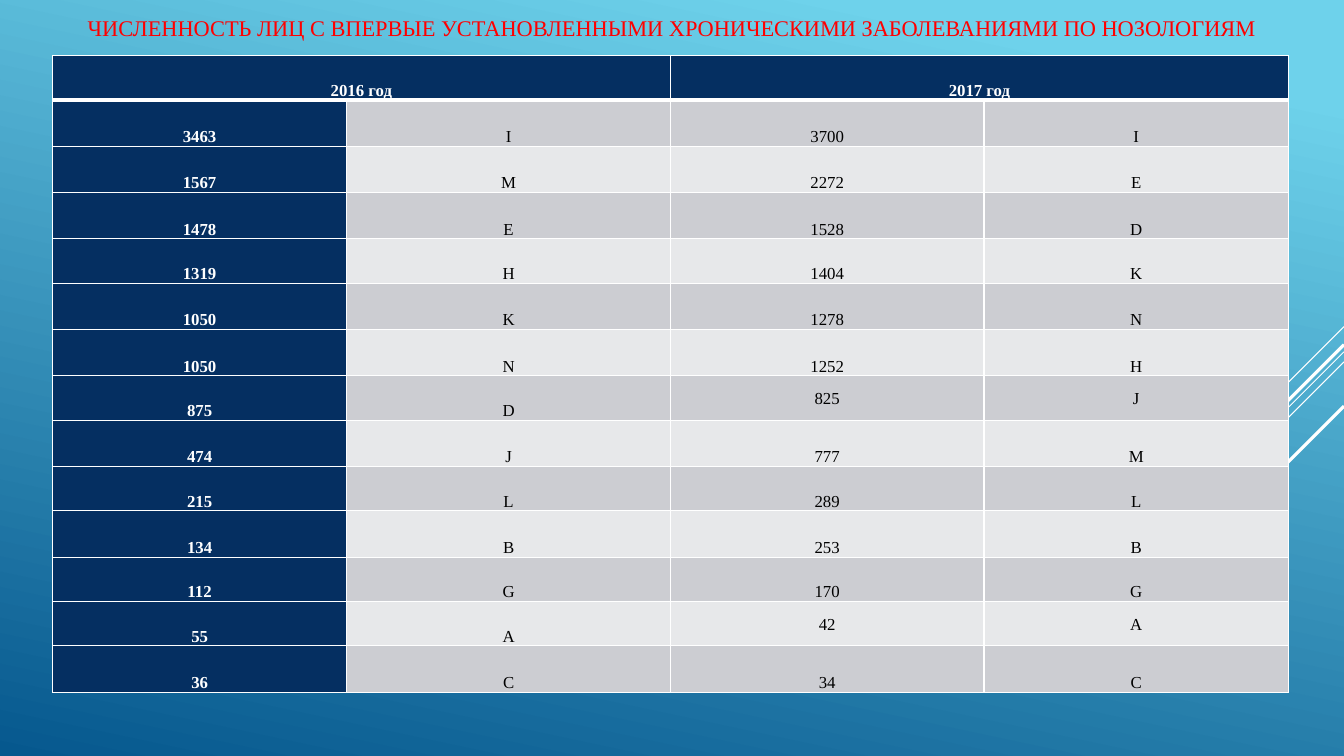
from dataclasses import dataclass

from lxml import etree
from pptx import Presentation
from pptx.dml.color import RGBColor
from pptx.enum.shapes import MSO_CONNECTOR
from pptx.enum.text import MSO_ANCHOR, MSO_AUTO_SIZE, PP_ALIGN
from pptx.oxml.ns import qn
from pptx.util import Inches, Pt

STRAIGHT = MSO_CONNECTOR.STRAIGHT
CENTER = PP_ALIGN.CENTER
MIDDLE, BOTTOM = MSO_ANCHOR.MIDDLE, MSO_ANCHOR.BOTTOM
NO_AUTOFIT = MSO_AUTO_SIZE.NONE


@dataclass(frozen=True)
class Theme:
    font: str = "Times New Roman"
    title_size: int = 16
    cell_size: int = 12
    sky: str = "6ED2EB"
    sea: str = "06588E"
    red: str = "FF0000"
    navy: str = "052F61"
    white: str = "FFFFFF"
    black: str = "000000"
    bands: tuple = ("CCCDD2", "E7E8EA")
    border: float = 1
    header_border: float = 3


THEME = Theme()

TITLE = ("ЧИСЛЕННОСТЬ ЛИЦ С ВПЕРВЫЕ УСТАНОВЛЕННЫМИ "
         "ХРОНИЧЕСКИМИ ЗАБОЛЕВАНИЯМИ ПО НОЗОЛОГИЯМ")
YEARS = ("2016 год", "2017 год")
# Count and disease class for 2016, then for 2017
CASES = [
    ("3463", "I", "3700", "I"),
    ("1567", "M", "2272", "E"),
    ("1478", "E", "1528", "D"),
    ("1319", "H", "1404", "K"),
    ("1050", "K", "1278", "N"),
    ("1050", "N", "1252", "H"),
    ("875", "D", "825", "J"),
    ("474", "J", "777", "M"),
    ("215", "L", "289", "L"),
    ("134", "B", "253", "B"),
    ("112", "G", "170", "G"),
    ("55", "A", "42", "A"),
    ("36", "C", "34", "C"),
]
COLUMN_WIDTHS = (2.92, 3.21, 3.11, 3.02)
ROW_HEIGHT, SHORT_ROW_HEIGHT = 0.46, 0.44
SHORT_ROWS = {0, 4, 7, 9, 11, 12}
MIDDLE_ROWS = {7, 12}  # rows whose 2017 cells are centred vertically

# Diagonal rays at 45°: start height at the right edge, run, weight
RAYS = [
    (3.24, 1, 0.75),
    (3.49, 3.26, 0.75),
    (3.59, 2.07, 0.75),
    (3.42, 1.91, 2.25),
    (4.03, 1.39, 2.25),
]
SLIDE_WIDTH, SLIDE_HEIGHT = 13.33, 7.5


def color(value):
    return RGBColor.from_string(value)


def add_run(paragraph, text, size, text_color, bold=False):
    paragraph.alignment = CENTER
    run = paragraph.add_run()
    run.text = text
    run.font.name = THEME.font
    run.font.size = Pt(size)
    run.font.bold = bold
    run.font.color.rgb = color(text_color)


def paint_background(slide):
    fill = slide.background.fill
    fill.gradient()
    fill.gradient_angle = 360 - 102
    stops = zip(fill.gradient_stops, (0.1, 1), (THEME.sky, THEME.sea))
    for stop, position, stop_color in stops:
        stop.position = position
        stop.color.rgb = color(stop_color)


def add_ray(slide, top, run, weight):
    ray = slide.shapes.add_connector(
        STRAIGHT, Inches(SLIDE_WIDTH), Inches(top),
        Inches(SLIDE_WIDTH - run), Inches(top + run))
    ray.line.color.rgb = color(THEME.white)
    ray.line.width = Pt(weight)
    etree.SubElement(ray.element.spPr, qn("a:effectLst"))


def format_title(slide):
    title = slide.shapes.title
    title.left, title.top = Inches(0), Inches(0)
    title.width, title.height = Inches(SLIDE_WIDTH), Inches(0.55)
    frame = title.text_frame
    frame.auto_size = NO_AUTOFIT
    frame.word_wrap = True
    frame.vertical_anchor = MIDDLE
    add_run(frame.paragraphs[0], TITLE, THEME.title_size, THEME.red)


def set_borders(cell, row):
    tc_pr = cell._tc.get_or_add_tcPr()
    weights = {side: THEME.border for side in ("lnL", "lnR", "lnT", "lnB")}
    if row == 0:
        weights["lnB"] = THEME.header_border
    elif row == 1:
        weights["lnT"] = THEME.header_border
    for side, weight in weights.items():
        line = etree.SubElement(tc_pr, qn(f"a:{side}"), w=str(Pt(weight)))
        solid = etree.SubElement(line, qn("a:solidFill"))
        etree.SubElement(solid, qn("a:srgbClr"), val=THEME.white)


def format_cell(cell, row, column):
    set_borders(cell, row)
    heading = row == 0 or column == 0
    cell.fill.solid()
    cell.fill.fore_color.rgb = color(
        THEME.navy if heading else THEME.bands[(row - 1) % 2])
    cell.margin_left = cell.margin_right = Inches(0.07)
    cell.margin_top = cell.margin_bottom = 0
    centred = row in MIDDLE_ROWS and column >= 2
    cell.vertical_anchor = MIDDLE if centred else BOTTOM


def write_cell(cell, text, heading):
    paragraph = cell.text_frame.paragraphs[0]
    paragraph.line_spacing = 1.07
    add_run(paragraph, text, THEME.cell_size,
            THEME.white if heading else THEME.black, heading)


def add_cases_table(slide):
    heights = [SHORT_ROW_HEIGHT if row in SHORT_ROWS else ROW_HEIGHT
               for row in range(len(CASES) + 1)]
    table = slide.shapes.add_table(
        len(heights), len(COLUMN_WIDTHS), Inches(0.52), Inches(0.55),
        Inches(sum(COLUMN_WIDTHS)), Inches(sum(heights))).table
    for column, width in zip(table.columns, COLUMN_WIDTHS):
        column.width = Inches(width)
    for row, height in zip(table.rows, heights):
        row.height = Inches(height)

    for row in range(len(heights)):
        for column in range(len(COLUMN_WIDTHS)):
            format_cell(table.cell(row, column), row, column)

    # Year headings, each over two columns
    for index, year in enumerate(YEARS):
        year_cell = table.cell(0, 2 * index)
        year_cell.merge(table.cell(0, 2 * index + 1))
        write_cell(year_cell, year, heading=True)

    # Counts and classes
    for row, values in enumerate(CASES, start=1):
        for column, value in enumerate(values):
            write_cell(table.cell(row, column), value, heading=column == 0)


def main():
    deck = Presentation()
    deck.slide_width = Inches(SLIDE_WIDTH)
    deck.slide_height = Inches(SLIDE_HEIGHT)
    slide = deck.slides.add_slide(deck.slide_layouts[5])

    # Backdrop
    paint_background(slide)
    for ray in RAYS:
        add_ray(slide, *ray)

    # Content
    format_title(slide)
    add_cases_table(slide)
    deck.save("out.pptx")


if __name__ == "__main__":
    main()
